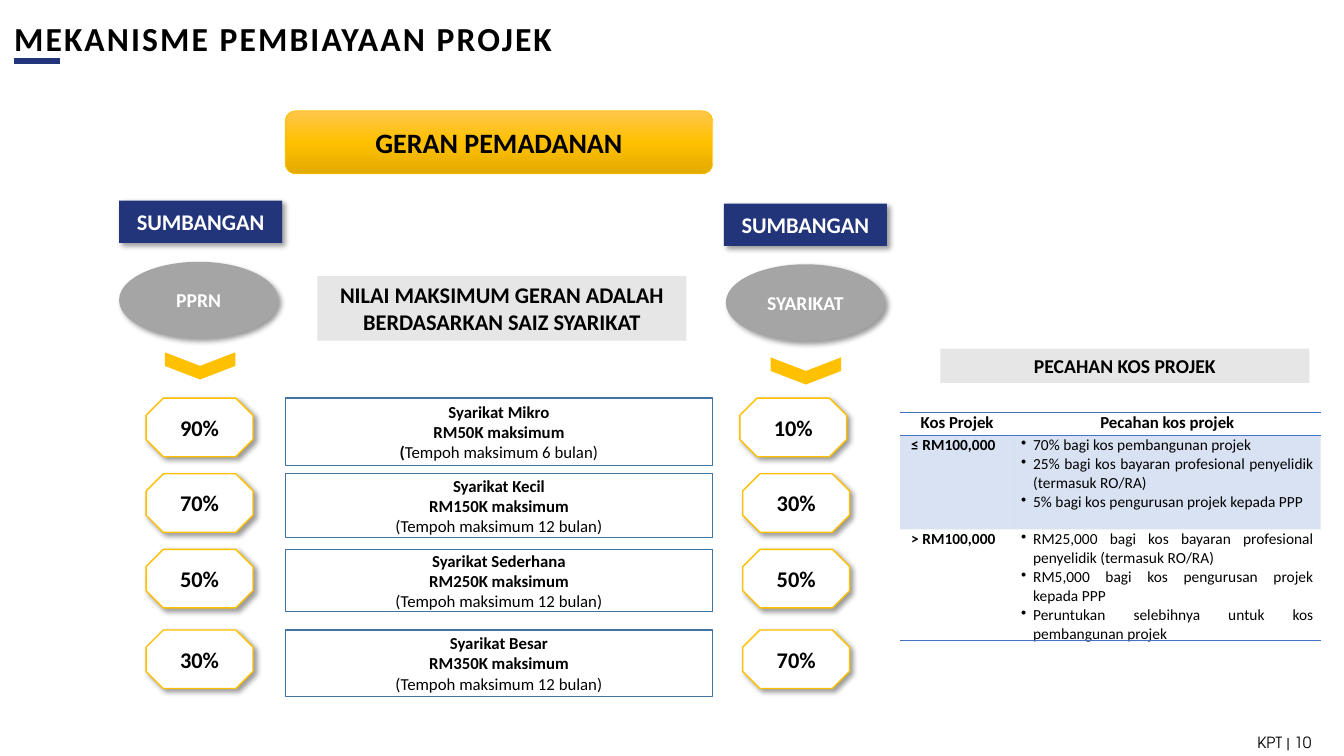
"""Build the project funding mechanism slide."""
from copy import deepcopy

from pptx import Presentation
from pptx.dml.color import RGBColor
from pptx.enum import shapes, text
from pptx.oxml import parse_xml
from pptx.oxml.ns import nsdecls, qn
from pptx.util import Pt

BLACK = RGBColor(0x00, 0x00, 0x00)
WHITE = RGBColor(0xFF, 0xFF, 0xFF)
NAVY = RGBColor(0x22, 0x35, 0x7B)
GOLD = RGBColor(0xFF, 0xC0, 0x00)
GOLD_LIGHT = RGBColor(0xFF, 0xC6, 0x4B)
GOLD_DARK = RGBColor(0xE3, 0xAB, 0x00)
GREY = RGBColor(0xA5, 0xA5, 0xA5)
PALE = RGBColor(0xE7, 0xE6, 0xE6)
STEEL = RGBColor(0x43, 0x73, 0x9E)
BLUE = RGBColor(0x44, 0x72, 0xC4)
FONT = "Calibri"
KIND = shapes.MSO_SHAPE
ALIGN = text.PP_ALIGN
ANCHOR = text.MSO_ANCHOR

TITLE = "MEKANISME PEMBIAYAAN PROJEK"
FOOTER = "KPT | 10"
GRANT = "GERAN PEMADANAN"
CONTRIBUTION = "SUMBANGAN"
CONTRIBUTORS = [
    ("PPRN", (85, 143.3), (85, 187), (133.2, 236.2)),
    ("SYARIKAT", (517, 145.4), (518.4, 188.8), (565.9, 239.8)),
]
BANNERS = [
    ("NILAI MAKSIMUM GERAN ADALAH BERDASARKAN SAIZ SYARIKAT", 16, (226.8, 197.3, 263.5, 46.1)),
    ("PECAHAN KOS PROJEK", 14, (671.8, 249.1, 263.5, 24.5)),
]
TIERS = [
    ("Syarikat Mikro", "RM50K maksimum", [("(", True), ("Tempoh maksimum 6 bulan)", False)],
     284.4, 48.2, "90%", "10%", 528.5),
    ("Syarikat Kecil", "RM150K maksimum", [("(Tempoh maksimum 12 bulan)", False)],
     338.4, 45.4, "70%", "30%", 530.6),
    ("Syarikat Sederhana", "RM250K maksimum", [("(Tempoh maksimum 12 bulan)", False)],
     392.4, 44.6, "50%", "50%", 530.6),
    ("Syarikat Besar", "RM350K maksimum", [("(Tempoh maksimum 12 bulan)", False)],
     450, 47.5, "30%", "70%", 530.6),
]
COST_HEADS = ["Kos Projek", "Pecahan kos projek"]
COSTS = [
    ("≤ RM100,000", ["70% bagi kos pembangunan projek",
                     "25% bagi kos bayaran profesional penyelidik (termasuk RO/RA)",
                     "5% bagi kos pengurusan projek kepada PPP"]),
    ("> RM100,000", ["RM25,000 bagi kos bayaran profesional penyelidik (termasuk RO/RA)",
                     "RM5,000 bagi kos pengurusan projek kepada PPP",
                     "Peruntukan selebihnya untuk kos pembangunan projek"]),
]
COST_COLS = [81.4, 218.9]
COST_ROWS = [16.6, 67, 79.1]
MID_X, MID_W = 203.8, 305.3
LEFT_X = 104.4


def write(p, runs, size, color=BLACK, align=ALIGN.CENTER, font=FONT):
    p.alignment = align
    for words, bold in runs:
        r = p.add_run()
        r.text = words
        r.font.name, r.font.size, r.font.bold = font, Pt(size), bold
        r.font.color.rgb = color


def no_effects(sp):
    sp._element.spPr.append(parse_xml(f"<a:effectLst {nsdecls('a')}/>"))


def drop_shadow(sp):
    effects = sp._element.spPr.find(qn("a:effectLst"))
    effects.append(parse_xml(
        f'<a:outerShdw {nsdecls("a")} blurRad="{Pt(4)}" dist="{Pt(3)}" dir="2700000" '
        'algn="tl" rotWithShape="0"><a:srgbClr val="000000"><a:alpha val="40000"/>'
        '</a:srgbClr></a:outerShdw>'))


def shape(kind, box, fill=None, line=None, width=1, shadow=False,
          paragraphs=(), size=16, color=BLACK, anchor=ANCHOR.MIDDLE):
    sp = s.shapes.add_shape(kind, *map(Pt, box))
    sp.shadow.inherit = False
    if fill is None:
        sp.fill.background()
    else:
        sp.fill.solid()
        sp.fill.fore_color.rgb = fill
    if line is None:
        sp.line.fill.background()
    else:
        sp.line.color.rgb = line
        sp.line.width = Pt(width)
    if shadow:
        drop_shadow(sp)
    tf = sp.text_frame
    tf.word_wrap = True
    tf.vertical_anchor = anchor
    for i, runs in enumerate(paragraphs):
        write(tf.add_paragraph() if i else tf.paragraphs[0], runs, size, color)
    return sp


def add_heading():
    sp = s.shapes.title
    sp.left, sp.top, sp.width, sp.height = map(Pt, (10.1, 10.8, 451.4, 33.1))
    tf = sp.text_frame
    tf.auto_size = text.MSO_AUTO_SIZE.NONE
    tf.vertical_anchor = ANCHOR.MIDDLE
    tf.margin_left = tf.margin_right = 0
    p = tf.paragraphs[0]
    p.line_spacing = 1.0
    write(p, [(TITLE, True)], 24, align=ALIGN.LEFT)
    p.runs[0].font._element.set("spc", "150")
    accent = s.shapes.add_connector(shapes.MSO_CONNECTOR.STRAIGHT,
                                    *map(Pt, (10.1, 43.6, 43.2, 43.6)))
    accent.line.color.rgb = NAVY
    accent.line.width = Pt(4.5)
    no_effects(accent)


def add_footer():
    tf = s.shapes.add_textbox(*map(Pt, (715.7, 519.8, 228.2, 21.6))).text_frame
    tf.word_wrap = True
    tf.vertical_anchor = ANCHOR.MIDDLE
    write(tf.paragraphs[0], [(FOOTER, False)], 11, align=ALIGN.RIGHT, font="TeX Gyre Adventor")


def add_grant():
    sp = shape(KIND.ROUNDED_RECTANGLE, (MID_X, 79.2, MID_W, 44.9), GOLD, GOLD, 0.5,
               paragraphs=[[(GRANT, True)]], size=20)
    sp.fill.gradient()
    sp.fill.gradient_angle = 270
    stops = sp._element.spPr.find(qn("a:gradFill")).find(qn("a:gsLst"))
    stops.append(deepcopy(stops[-1]))
    for stop, place, color in zip(sp.fill.gradient_stops, (0, 0.5, 1),
                                  (GOLD_LIGHT, GOLD, GOLD_DARK)):
        stop.position = place
        stop.color.rgb = color


def border(cell, tag):
    cell._tc.get_or_add_tcPr().insert(0, parse_xml(
        f'<a:{tag} {nsdecls("a")} w="{Pt(1)}"><a:solidFill><a:srgbClr val="{BLUE}"/>'
        f'</a:solidFill></a:{tag}>'))


def indent(p, left, first=0, bullet=None):
    pPr = p._p.get_or_add_pPr()
    pPr.set("marL", str(Pt(left)))
    pPr.set("indent", str(Pt(first)))
    if bullet:
        pPr.append(parse_xml(f'<a:buChar {nsdecls("a")} char="{bullet}"/>'))


def add_costs():
    tb = s.shapes.add_table(3, 2, *map(Pt, (643, 294.5, sum(COST_COLS), sum(COST_ROWS)))).table
    tb.first_row = tb.horz_banding = False
    tb._tbl.tblPr.find(qn("a:tableStyleId")).text = "{2D5ABB26-0587-4C30-8999-92F81FD0307C}"
    for col, width in zip(tb.columns, COST_COLS):
        col.width = Pt(width)
    for i, height in enumerate(COST_ROWS):
        tb.rows[i].height = Pt(height)
        for cell in tb.rows[i].cells:
            cell.margin_left = cell.margin_right = Pt(5)
            cell.margin_top = cell.margin_bottom = 0
            if i == 1:
                cell.fill.solid()
                cell.fill.fore_color.rgb = BLUE
                cell._tc.tcPr.find(".//" + qn("a:srgbClr")).append(
                    parse_xml(f'<a:alpha {nsdecls("a")} val="20000"/>'))
            else:
                cell.fill.background()
                border(cell, "lnB")
            if i == 0:
                border(cell, "lnT")
    for cell, head in zip(tb.rows[0].cells, COST_HEADS):
        write(cell.text_frame.paragraphs[0], [(head, True)], 12)
    for i, (limit, shares) in enumerate(COSTS, 1):
        p = tb.cell(i, 0).text_frame.paragraphs[0]
        indent(p, 2.9)
        write(p, [(limit, True)], 11, align=ALIGN.LEFT)
        tf = tb.cell(i, 1).text_frame
        for j, share in enumerate(shares):
            p = tf.add_paragraph() if j else tf.paragraphs[0]
            indent(p, 8.6, -8.6, "•")
            write(p, [(share, False)], 11, align=ALIGN.JUSTIFY)


prs = Presentation()
prs.slide_width, prs.slide_height = Pt(960), Pt(540)
s = prs.slides.add_slide(prs.slide_layouts[5])
add_heading()
add_footer()
add_grant()
for name, tag_at, oval_at, arrow_at in CONTRIBUTORS:
    shape(KIND.RECTANGLE, (*tag_at, 116.6, 30.2), NAVY, shadow=True,
          paragraphs=[[(CONTRIBUTION, True)]], color=WHITE)
    shape(KIND.OVAL, (*oval_at, 113.8, 54.7), GREY, shadow=True,
          paragraphs=[[(name, True)]], size=14, color=WHITE)
    shape(KIND.CHEVRON, (*arrow_at, 19.4, 50.4), GOLD).rotation = 90
for words, size, box in BANNERS:
    shape(KIND.RECTANGLE, box, PALE, paragraphs=[[(words, True)]], size=size, anchor=ANCHOR.TOP)
for name, limit, period, top, height, grant, share, share_x in TIERS:
    shape(KIND.RECTANGLE, (MID_X, top, MID_W, height), line=STEEL,
          paragraphs=[[(name, True)], [(limit, True)], period], size=12)
    for x, percent in ((LEFT_X, grant), (share_x, share)):
        shape(KIND.OCTAGON, (x, top, 76.3, 41.8), WHITE, GOLD, shadow=True,
              paragraphs=[[(percent, True)]])
add_costs()
prs.save("out.pptx")
